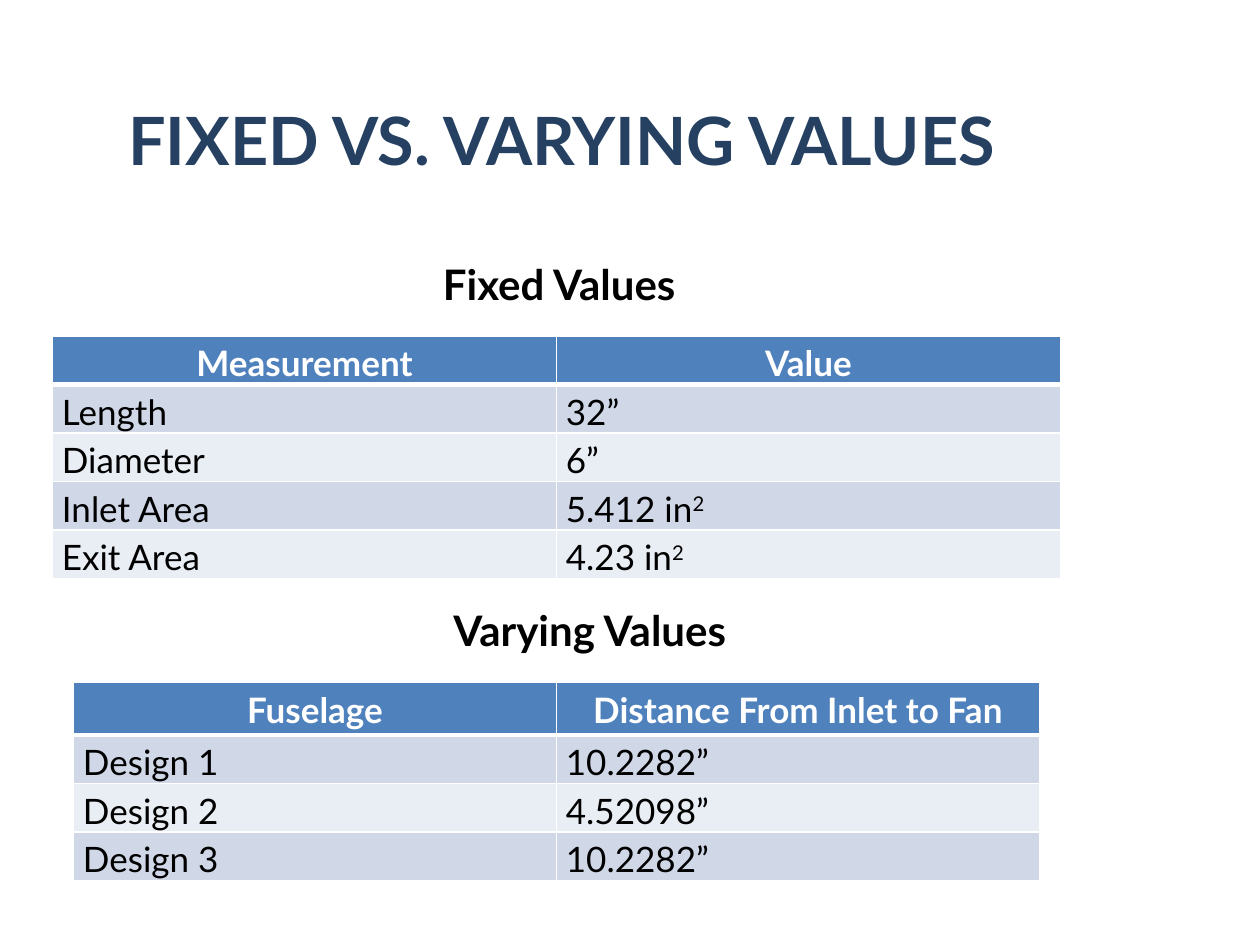
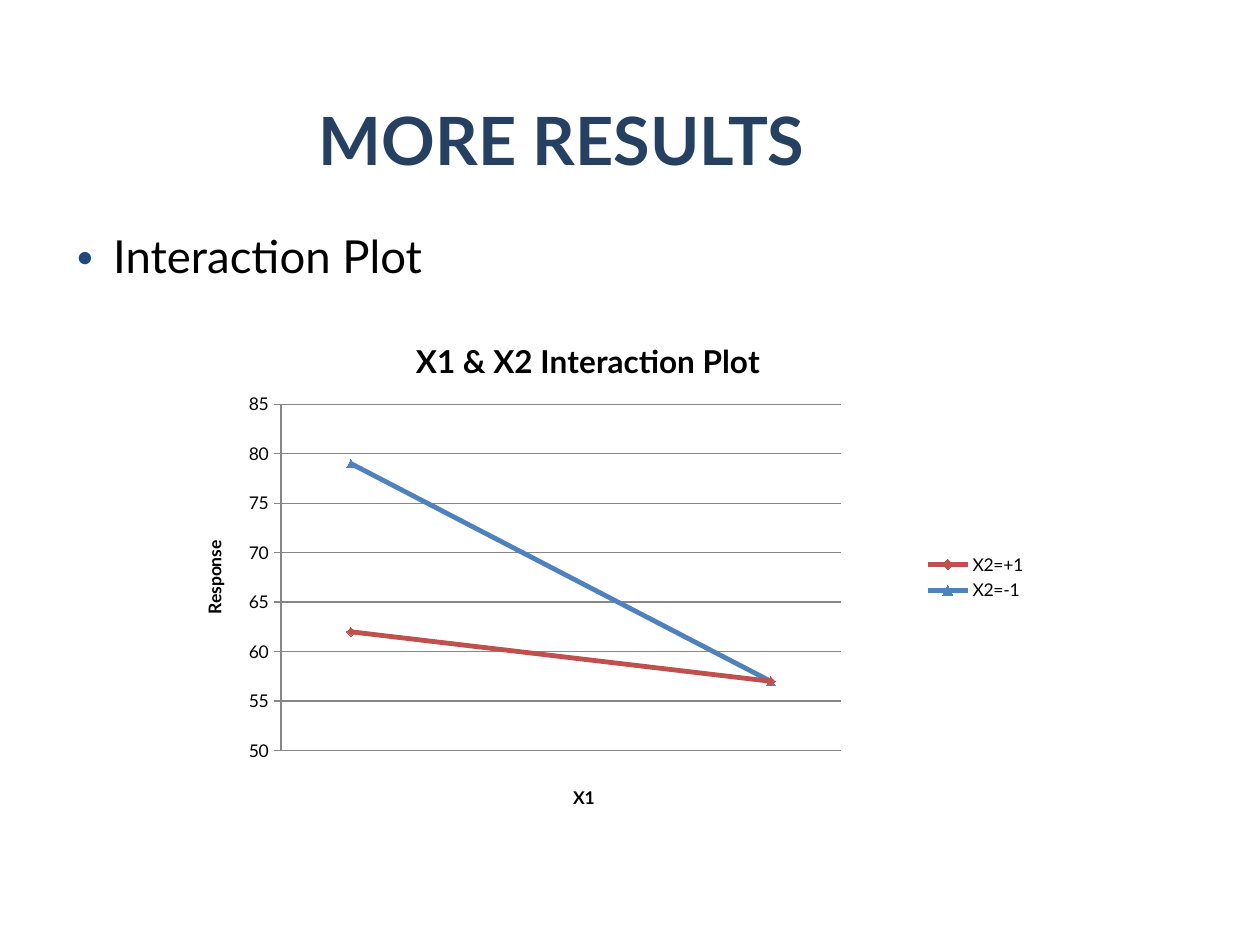
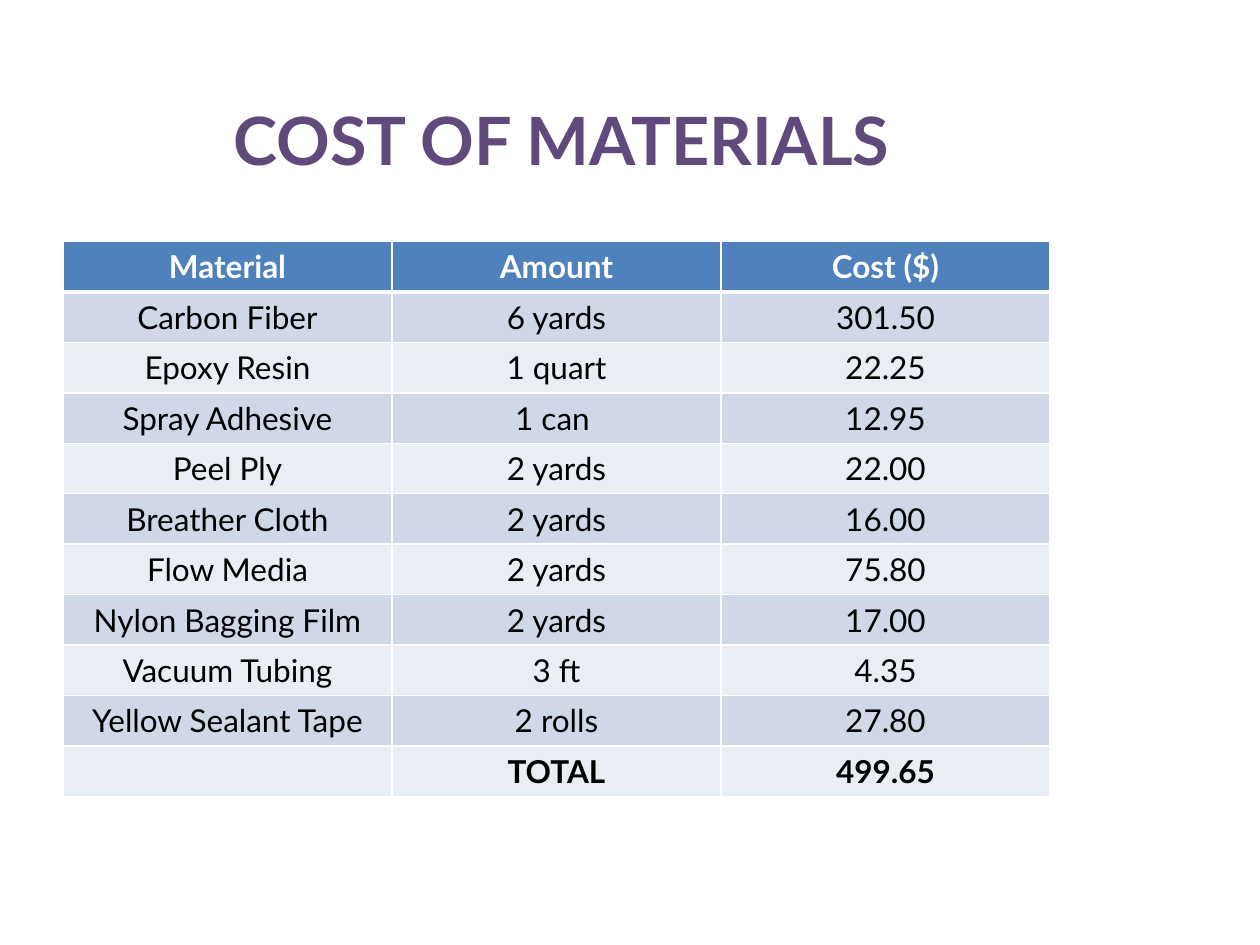
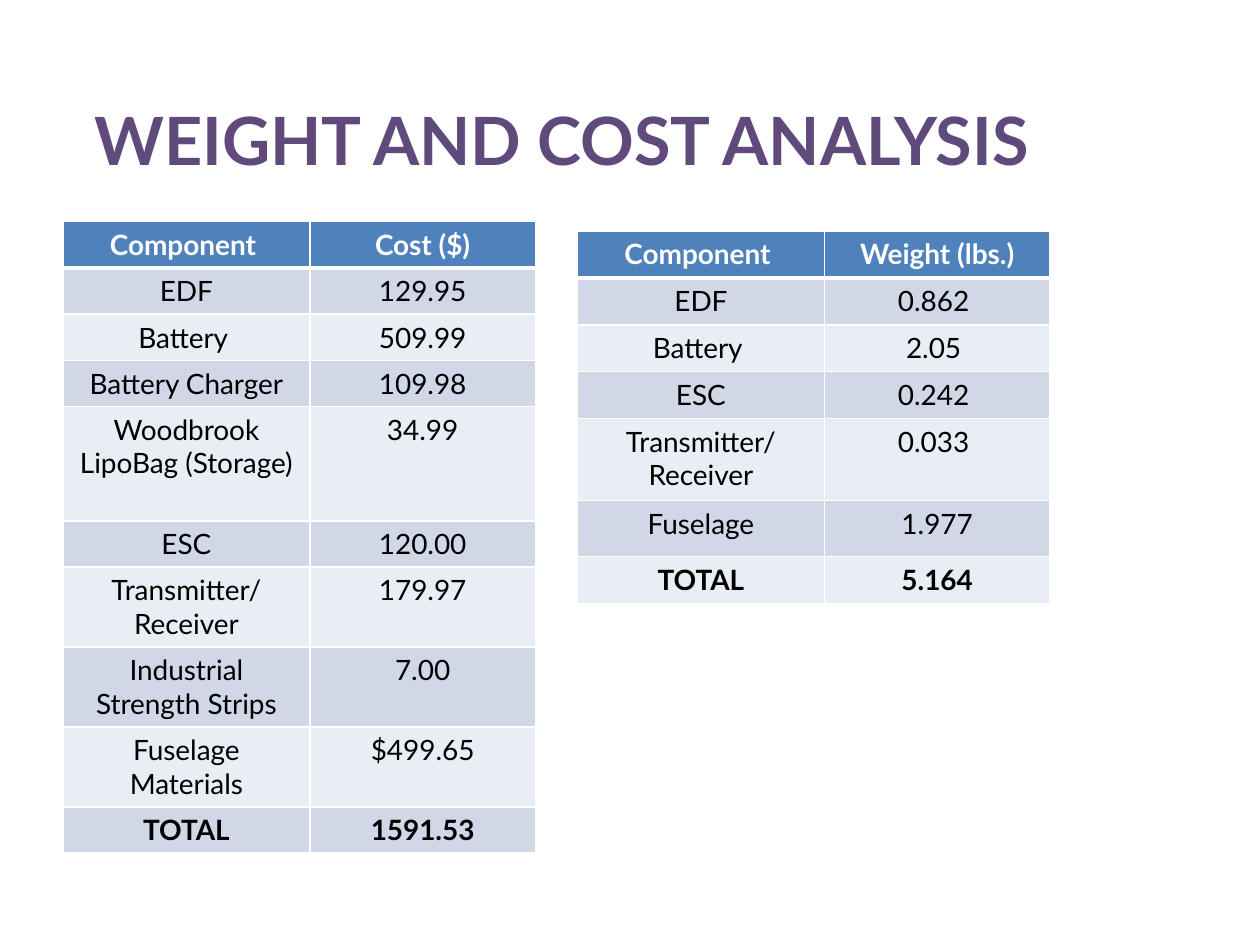
from dataclasses import dataclass
from typing import Any

from lxml import etree
from pptx import Presentation
from pptx import util as u
from pptx.chart.data import XyChartData
from pptx.dml.color import RGBColor
from pptx.enum import chart as charts, text
from pptx.oxml import ns

Pt = u.Pt

# Shared look
FONT = "Lato"
NAVY = RGBColor(0x25, 0x40, 0x61)
PURPLE = RGBColor(0x60, 0x4A, 0x7B)
OUTLINE = RGBColor(0x0B, 0x24, 0x43)
BULLET = RGBColor(0x1F, 0x49, 0x7D)
BLACK = RGBColor(0x00, 0x00, 0x00)
WHITE = RGBColor(0xFF, 0xFF, 0xFF)
BLUE = RGBColor(0x4F, 0x81, 0xBD)
RED = RGBColor(0xC0, 0x50, 0x4D)
GRID = RGBColor(0x86, 0x86, 0x86)
BANDS = (RGBColor(0xD0, 0xD8, 0xE8), RGBColor(0xE9, 0xED, 0xF4))


@dataclass(frozen=True)
class CellStyle:
    size: float
    margin_x: float = 6.5
    margin_y: float = 3.6
    spacing: float = 1.0
    body_align: Any = text.PP_ALIGN.CENTER


@dataclass(frozen=True)
class Grid:
    left: float
    top: float
    widths: list[float]
    heights: list[float]
    rows: list[tuple[str, ...]]
    style: CellStyle


@dataclass(frozen=True)
class Line:
    name: str
    values: tuple[float, float]
    color: RGBColor
    marker: Any


VALUES = CellStyle(20, 5.4, 0, 1.15, text.PP_ALIGN.LEFT)
MATERIALS = CellStyle(18)
COMPONENTS = CellStyle(16)


def apply(target: Any, values: dict[str, Any]) -> None:
    for name, value in values.items():
        setattr(target, name, value)


def add_child(parent: Any, tag: str, **attributes: Any) -> Any:
    child = etree.SubElement(parent, ns.qn(tag))
    for name, value in attributes.items():
        child.set(name, str(value))
    return child


def style_font(font: Any, size: float, color: RGBColor, bold: bool = False) -> None:
    apply(font, {"name": FONT, "size": Pt(size), "bold": bold})
    font.color.rgb = color


def add_line(parent: Any, tag: str, width: float, color: RGBColor) -> Any:
    line = add_child(parent, tag, w=int(Pt(width)))
    add_child(add_child(line, "a:solidFill"), "a:srgbClr", val=color)
    return line


def add_text(page: Any, words: str, left: float, top: float, width: float, height: float,
             size: float, color: RGBColor = BLACK, bold: bool = False,
             wrap: bool = True) -> tuple[Any, Any]:
    box = page.shapes.add_textbox(Pt(left), Pt(top), Pt(width), Pt(height))
    box.text_frame.word_wrap = wrap
    para = box.text_frame.paragraphs[0]
    span = para.add_run()
    span.text = words
    style_font(span.font, size, color, bold)
    return box.text_frame, para


def add_page(deck: Any, title: str, color: RGBColor) -> Any:
    page = deck.slides.add_slide(deck.slide_layouts[6])
    frame, para = add_text(page, title, 36, 12, 570, 90, 38, color, True)
    apply(frame, {"vertical_anchor": text.MSO_ANCHOR.BOTTOM,
                  "margin_left": Pt(3.6), "margin_right": Pt(3.6),
                  "margin_top": 0, "margin_bottom": 0})
    para.alignment = text.PP_ALIGN.CENTER
    # Hairline around the title letters
    properties = para.runs[0].font._element
    properties.insert(0, add_line(properties, "a:ln", 0.04, OUTLINE))
    return page


def add_heading(page: Any, words: str, left: float, top: float, width: float) -> None:
    frame, _ = add_text(page, words, left, top, width, 36, 24, bold=True, wrap=False)
    frame.auto_size = text.MSO_AUTO_SIZE.SHAPE_TO_FIT_TEXT


def fill_cell(cell: Any, words: str, row: int, bold: bool, style: CellStyle) -> None:
    header = row == 0
    apply(cell, {"margin_left": Pt(style.margin_x), "margin_right": Pt(style.margin_x),
                 "margin_top": Pt(style.margin_y), "margin_bottom": Pt(style.margin_y)})
    para = cell.text_frame.paragraphs[0]
    apply(para, {"alignment": text.PP_ALIGN.CENTER if header else style.body_align,
                 "line_spacing": style.spacing})
    # A caret starts a superscript
    for index, part in enumerate(words.split("^") if words else []):
        span = para.add_run()
        span.text = part
        style_font(span.font, style.size, WHITE if header else BLACK, bold)
        if index:
            span.font._element.set("baseline", "30000")
    # White rules, heavier under the header
    properties = cell._tc.get_or_add_tcPr()
    widths = {"L": 1, "R": 1, "T": 3 if row == 1 else 1, "B": 3 if header else 1}
    for side, width in widths.items():
        add_line(properties, f"a:ln{side}", width, WHITE)
    cell.fill.solid()
    cell.fill.fore_color.rgb = BLUE if header else BANDS[(row - 1) % 2]


def add_grid(page: Any, grid: Grid) -> None:
    frame = page.shapes.add_table(
        len(grid.rows), len(grid.widths), Pt(grid.left), Pt(grid.top),
        Pt(sum(grid.widths)), Pt(sum(grid.heights)))
    table = frame.table
    apply(table, {"first_row": False, "horz_banding": False})
    for column, width in zip(table.columns, grid.widths):
        column.width = Pt(width)
    for row, (height, words) in enumerate(zip(grid.heights, grid.rows)):
        table.rows[row].height = Pt(height)
        bold = row == 0 or "TOTAL" in words
        for column, word in enumerate(words):
            fill_cell(table.cell(row, column), word, row, bold, grid.style)


def set_title(title: Any, words: str, size: float) -> None:
    span = title.text_frame.paragraphs[0].add_run()
    span.text = words
    style_font(span.font, size, BLACK, True)


def place(part: Any, position: int, settings: dict[str, Any]) -> None:
    """Give a chart part a fixed place, as shares of the chart."""
    for old in part.findall(ns.qn("c:layout")):
        part.remove(old)
    layout = add_child(part, "c:layout")
    part.insert(position, layout)
    manual = add_child(layout, "c:manualLayout")
    for name, value in settings.items():
        add_child(manual, f"c:{name}", val=value)


def add_interaction_chart(page: Any, lines: list[Line]) -> None:
    data = XyChartData()
    for line in lines:
        series = data.add_series(line.name)
        for x, y in zip((1, 4), line.values):
            series.add_data_point(x, y)
    chart = page.shapes.add_chart(charts.XL_CHART_TYPE.XY_SCATTER_SMOOTH, Pt(78), Pt(180),
                                  Pt(516), Pt(300), data).chart
    style_font(chart.font, 10, BLACK)
    set_title(chart.chart_title, "X1 & X2 Interaction Plot", 18)
    chart.chart_title._element.find(ns.qn("c:overlay")).set("val", "1")
    chart.has_legend = True
    apply(chart.legend, {"position": charts.XL_LEGEND_POSITION.RIGHT,
                         "include_in_layout": False})

    # Axes
    across, upright = chart.category_axis, chart.value_axis
    apply(across, {"visible": False, "has_major_gridlines": False,
                   "minimum_scale": 0.5, "maximum_scale": 4.5})
    apply(upright, {"minimum_scale": 50, "maximum_scale": 85, "major_unit": 5,
                    "has_major_gridlines": True,
                    "major_tick_mark": charts.XL_TICK_MARK.CROSS})
    set_title(across.axis_title, "X1", 10)
    set_title(upright.axis_title, "Response", 10)
    for part in (upright, upright.major_gridlines):
        part.format.line.color.rgb = GRID
        part.format.line.width = Pt(0.75)

    # Lines and markers
    plot = chart.plots[0]
    plot.vary_by_categories = False
    for series, line in zip(plot.series, lines):
        series.format.line.color.rgb = line.color
        series.format.line.width = Pt(2.75)
        apply(series.marker, {"style": line.marker, "size": 5})
        series.marker.format.fill.solid()
        series.marker.format.fill.fore_color.rgb = line.color
        series.marker.format.line.color.rgb = line.color

    # Fixed plot area and axis title
    edges = {"xMode": "edge", "yMode": "edge"}
    area = chart._chartSpace.find(".//" + ns.qn("c:plotArea"))
    place(area, 0, {"layoutTarget": "inner", **edges,
                    "x": 0.16, "y": 0.17, "w": 0.62, "h": 0.66})
    place(across.axis_title._element, 1, {**edges, "x": 0.48, "y": 0.89})


def add_bullet(page: Any, words: str) -> None:
    _, para = add_text(page, words, 36, 126.7, 570, 381.6, 26)
    properties = para._p.get_or_add_pPr()
    properties.set("marL", str(int(Pt(21.6))))
    properties.set("indent", str(-int(Pt(21.6))))
    add_child(add_child(properties, "a:buClr"), "a:srgbClr", val=BULLET)
    add_child(properties, "a:buSzPct", val=73000)
    add_child(properties, "a:buFont", typeface=FONT)
    add_child(properties, "a:buChar", char="•")


def build_values(deck: Any) -> None:
    page = add_page(deck, "FIXED VS. VARYING VALUES", NAVY)
    add_grid(page, Grid(30, 192, [288] * 2, [27.7] * 5, [
        ("Measurement", "Value"),
        ("Length", "32”"),
        ("Diameter", "6”"),
        ("Inlet Area", "5.412 in^2"),
        ("Exit Area", "4.23 in^2"),
    ], VALUES))
    add_grid(page, Grid(42, 390, [276] * 2, [30] + [27.7] * 3, [
        ("Fuselage", "Distance From Inlet to Fan"),
        ("Design 1", "10.2282”"),
        ("Design 2", "4.52098”"),
        ("Design 3", "10.2282”"),
    ], VALUES))
    add_heading(page, "Fixed Values", 246, 144, 156)
    add_heading(page, "Varying Values", 252, 342, 176)


def build_results(deck: Any) -> None:
    page = add_page(deck, "MORE RESULTS", NAVY)
    add_bullet(page, "Interaction Plot")
    add_interaction_chart(page, [
        Line("X2=+1", (62, 57), RED, charts.XL_MARKER_STYLE.DIAMOND),
        Line("X2=-1", (79, 57), BLUE, charts.XL_MARKER_STYLE.TRIANGLE),
    ])


def build_materials(deck: Any) -> None:
    page = add_page(deck, "COST OF MATERIALS", PURPLE)
    add_grid(page, Grid(36, 138, [188] * 3, [28.8] * 11, [
        ("Material", "Amount", "Cost ($)"),
        ("Carbon Fiber", "6 yards", "301.50"),
        ("Epoxy Resin", "1 quart", "22.25"),
        ("Spray Adhesive", "1 can ", "12.95"),
        ("Peel Ply", "2 yards", "22.00"),
        ("Breather Cloth", "2 yards", "16.00"),
        ("Flow Media", "2 yards", "75.80"),
        ("Nylon Bagging Film", "2 yards", "17.00"),
        ("Vacuum Tubing", "3 ft", "4.35"),
        ("Yellow Sealant Tape", "2 rolls", "27.80"),
        ("", "TOTAL", "499.65"),
    ], MATERIALS))


def build_analysis(deck: Any) -> None:
    page = add_page(deck, "WEIGHT AND COST ANALYSIS", PURPLE)
    widths = [141.1, 128.9]
    cost_heights = [26.2] * 4 + [65.2, 26.2] + [45.7] * 3 + [26.2]
    add_grid(page, Grid(36, 126.7, widths, cost_heights, [
        ("Component ", "Cost ($)"),
        ("EDF", "129.95"),
        ("Battery ", "509.99"),
        ("Battery Charger", "109.98"),
        ("Woodbrook LipoBag (Storage)", "34.99"),
        ("ESC", "120.00"),
        ("Transmitter/ Receiver", "179.97"),
        ("Industrial Strength Strips", "7.00"),
        ("Fuselage Materials", "$499.65"),
        ("TOTAL", "1591.53"),
    ], COMPONENTS))
    add_grid(page, Grid(330, 132, widths, [26.8] * 4 + [46.8, 32, 26.8], [
        ("Component ", "Weight (lbs.)"),
        ("EDF", "0.862 "),
        ("Battery ", "2.05 "),
        ("ESC", "0.242 "),
        ("Transmitter/ Receiver", "0.033 "),
        ("Fuselage", "1.977"),
        ("TOTAL", "5.164"),
    ], COMPONENTS))


def main() -> None:
    deck = Presentation()
    apply(deck, {"slide_width": Pt(720), "slide_height": Pt(540)})
    for build in (build_values, build_results, build_materials, build_analysis):
        build(deck)
    deck.save("out.pptx")


if __name__ == "__main__":
    main()
